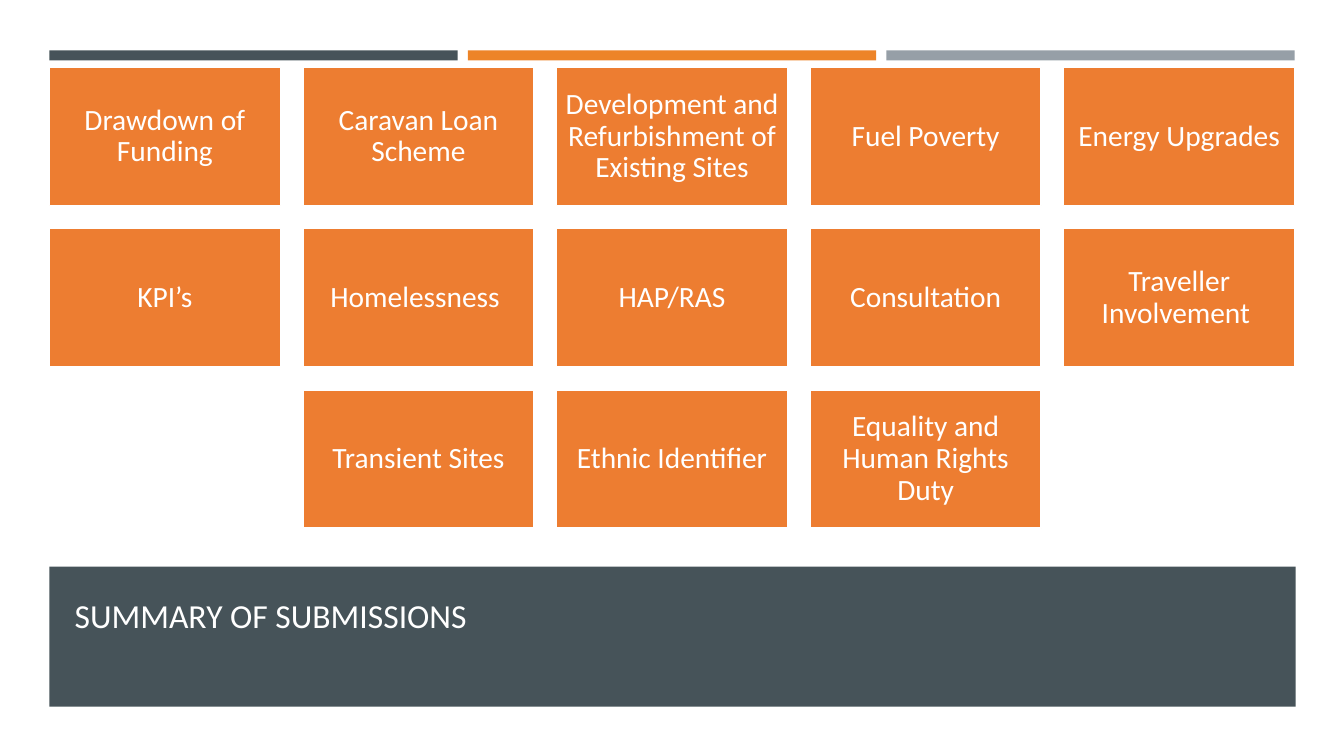
from pptx import Presentation
from pptx.dml.color import RGBColor
from pptx.enum.shapes import MSO_SHAPE as Shape
from pptx.enum.text import MSO_ANCHOR as Anchor, PP_ALIGN as Align
from pptx.util import Inches, Pt

SLATE = RGBColor(0x46, 0x53, 0x59)
ORANGE = RGBColor(0xED, 0x84, 0x28)
GREY = RGBColor(0x96, 0x9F, 0xA7)
TILE_ORANGE = RGBColor(0xED, 0x7D, 0x31)
WHITE = RGBColor(0xFF, 0xFF, 0xFF)

LEFT = 0.49
STRIPE_WIDTH, STRIPE_PITCH = 4.05, 4.15
GRID_TOP, GRID_WIDTH, COLUMNS = 0.67, 12.35, 5
TILE_WIDTH, TILE_HEIGHT, ROW_PITCH = 2.29, 1.37, 1.6
COLUMN_PITCH = (GRID_WIDTH - TILE_WIDTH) / (COLUMNS - 1)

TOPIC_ROWS = [
    ["Drawdown of Funding", "Caravan Loan Scheme",
     "Development and Refurbishment of Existing Sites",
     "Fuel Poverty", "Energy Upgrades"],
    ["KPI’s", "Homelessness ", "HAP/RAS", "Consultation",
     "Traveller Involvement "],
    ["Transient Sites", "Ethnic Identifier", "Equality and Human Rights Duty"],
]


class SlideBuilder:
    font_name = "Calibri"
    text_color = WHITE

    def __init__(self, presentation):
        self.slide = presentation.slides.add_slide(presentation.slide_layouts[5])

    def set_text(self, shape, text, size, align, inset):
        frame = shape.text_frame
        frame.text = text
        frame.word_wrap = True
        frame.vertical_anchor = Anchor.MIDDLE
        frame.margin_left = frame.margin_right = Inches(inset)
        frame.margin_top = frame.margin_bottom = Inches(inset)
        paragraph = frame.paragraphs[0]
        paragraph.alignment = align
        paragraph.line_spacing = 0.9
        font = paragraph.runs[0].font
        font.name, font.size = self.font_name, Pt(size)
        font.color.rgb = self.text_color

    def rectangle(self, left, top, width, height, fill):
        shape = self.slide.shapes.add_shape(
            Shape.RECTANGLE, Inches(left), Inches(top), Inches(width), Inches(height))
        shape.shadow.inherit = False
        shape.fill.solid()
        shape.fill.fore_color.rgb = fill
        shape.line.fill.background()
        return shape

    def backdrop(self, left, top, width, height, fill):
        """Add a rectangle that lies behind the title."""
        shape = self.rectangle(left, top, width, height, fill)
        self.slide.shapes.title.element.addprevious(shape.element)

    def title(self, text, left, top, width, height):
        title = self.slide.shapes.title
        title.left, title.top = Inches(left), Inches(top)
        title.width, title.height = Inches(width), Inches(height)
        self.set_text(title, text, 24, Align.LEFT, 0.1)

    def tile(self, text, left, top):
        tile = self.rectangle(left, top, TILE_WIDTH, TILE_HEIGHT, TILE_ORANGE)
        tile.line.color.rgb = WHITE
        tile.line.width = Pt(1)
        self.set_text(tile, text, 21, Align.CENTER, 0.09)


def main():
    presentation = Presentation()
    presentation.slide_width = Inches(13.33)
    presentation.slide_height = Inches(7.5)
    builder = SlideBuilder(presentation)

    for index, color in enumerate([SLATE, ORANGE, GREY]):
        builder.backdrop(LEFT + index * STRIPE_PITCH, 0.5, STRIPE_WIDTH, 0.1, color)
    builder.backdrop(LEFT, 5.62, 12.36, 1.39, SLATE)
    builder.title("SUMMARY OF SUBMISSIONS", 0.64, 5.75, 5.37, 0.75)

    for row, topics in enumerate(TOPIC_ROWS):
        first_column = (COLUMNS - len(topics)) / 2
        for column, topic in enumerate(topics):
            builder.tile(topic, LEFT + (first_column + column) * COLUMN_PITCH,
                         GRID_TOP + row * ROW_PITCH)

    presentation.save("out.pptx")


if __name__ == "__main__":
    main()
